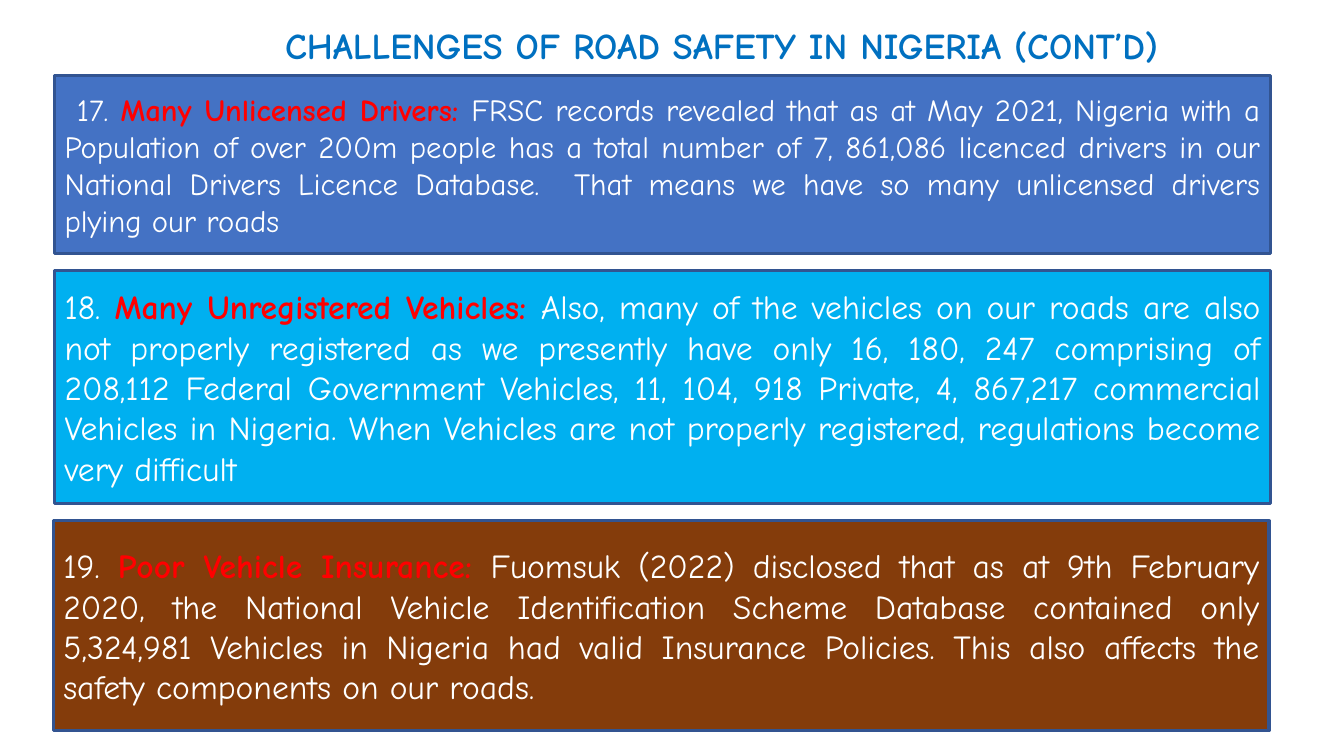
from dataclasses import dataclass

from pptx import Presentation
from pptx import util as u
from pptx.dml.color import RGBColor
from pptx.enum import shapes, text


@dataclass(frozen=True)
class Theme:
    font: str = "Comic Neue"
    title: str = "0070C0"
    body: str = "FFFFFF"
    heading: str = "FF0000"
    border: str = "325491"
    blue: str = "4472C4"
    sky: str = "00B0F0"
    brown: str = "843C0B"
    title_size: int = 26
    small_size: int = 22
    body_size: int = 24


THEME = Theme()
BOX_WIDTH = 868.3

# left, top, height, fill, type size, number, heading, body
CHALLENGES = [
    (39.1, 54, 127, THEME.blue, THEME.small_size,
     " 17. ", "Many Unlicensed Drivers: ",
     "FRSC records revealed that as at May 2021, Nigeria with a Population of "
     "over 200m people has a total number of 7, 861,086 licenced drivers in our "
     "National Drivers Licence Database.  That means we have so many unlicensed "
     "drivers plying our roads"),
    (39.1, 193.5, 166, THEME.sky, THEME.body_size,
     "18. ", "Many Unregistered Vehicles: ",
     "Also, many of the vehicles on our roads are also not properly registered "
     "as we presently have only 16, 180, 247 comprising of 208,112 Federal "
     "Government Vehicles, 11, 104, 918 Private, 4, 867,217 commercial Vehicles "
     "in Nigeria. When Vehicles are not properly registered, regulations become "
     "very difficult "),
    (38.2, 372, 150, THEME.brown, THEME.body_size,
     "19. ", "Poor Vehicle Insurance: ",
     "Fuomsuk (2022) disclosed that as at 9th February 2020, the National "
     "Vehicle Identification Scheme Database contained only 5,324,981 Vehicles "
     "in Nigeria had valid Insurance Policies. This also affects the safety "
     "components on our roads."),
]


def add_run(p, words, *, size, color, bold=False):
    r = p.add_run()
    r.text = words
    r.font.name = THEME.font
    r.font.size = u.Pt(size)
    r.font.bold = bold
    r.font.color.rgb = RGBColor.from_string(color)


def set_title(s, words):
    title = s.shapes.title
    title.left, title.top = u.Pt(85), u.Pt(16.6)
    title.width, title.height = u.Pt(861.8), u.Pt(25.2)
    tf = title.text_frame
    tf.word_wrap = True
    tf.auto_size = text.MSO_AUTO_SIZE.NONE
    tf.vertical_anchor = text.MSO_ANCHOR.TOP
    p = tf.paragraphs[0]
    p.alignment = text.PP_ALIGN.CENTER
    p.line_spacing = 0.9
    add_run(p, words, size=THEME.title_size, color=THEME.title, bold=True)


def add_challenge(s, left, top, height, fill, size, number, heading, body):
    sp = s.shapes.add_shape(shapes.MSO_SHAPE.RECTANGLE,
                            u.Pt(left), u.Pt(top), u.Pt(BOX_WIDTH), u.Pt(height))
    sp.shadow.inherit = False
    sp.fill.solid()
    sp.fill.fore_color.rgb = RGBColor.from_string(fill)
    sp.line.color.rgb = RGBColor.from_string(THEME.border)
    sp.line.width = u.Pt(2.25)
    tf = sp.text_frame
    tf.word_wrap = True
    tf.vertical_anchor = text.MSO_ANCHOR.MIDDLE
    p = tf.paragraphs[0]
    p.alignment = text.PP_ALIGN.JUSTIFY
    add_run(p, number, size=size, color=THEME.body)
    add_run(p, heading, size=size, color=THEME.heading, bold=True)
    add_run(p, body, size=size, color=THEME.body)


def main():
    prs = Presentation()
    prs.slide_width, prs.slide_height = u.Pt(960), u.Pt(540)
    s = prs.slides.add_slide(prs.slide_layouts.get_by_name("Title Only"))
    set_title(s, "CHALLENGES OF ROAD SAFETY IN NIGERIA (CONT’D)")
    for challenge in CHALLENGES:
        add_challenge(s, *challenge)
    prs.save("out.pptx")


if __name__ == "__main__":
    main()
